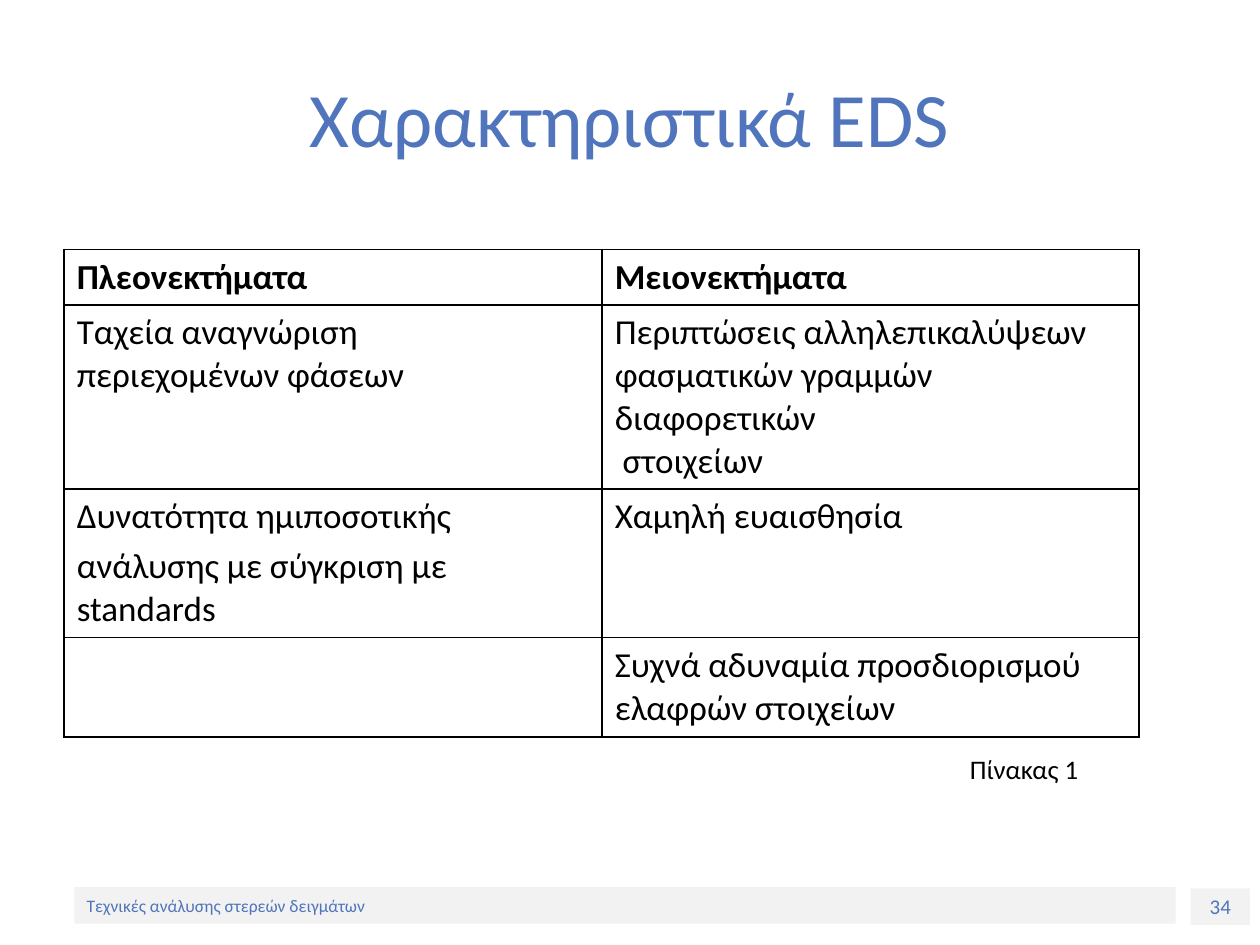
from lxml import etree
from pptx import Presentation
from pptx.dml.color import RGBColor
from pptx.enum.shapes import MSO_SHAPE
from pptx.enum.text import MSO_ANCHOR, PP_ALIGN
from pptx.oxml import parse_xml
from pptx.util import Inches, Pt

NS = "http://schemas.openxmlformats.org/drawingml/2006/main"
COLORS = {"accent": "5075BC", "text": "000000", "band": "F2F2F2"}
FONT = "Calibri"

# text, box (left, top, width, height), format
TEXTS = [
    ("34", (9.45, 7.05, 0.47, 0.29),
     dict(size=12, color="accent", align=PP_ALIGN.CENTER, band=True)),
    ("Τεχνικές ανάλυσης στερεών δειγμάτων", (0.59, 7.04, 8.74, 0.29),
     dict(size=10, color="accent", band=True)),
    ("Χαρακτηριστικά EDS", (0.5, 0.3, 9, 1.25),
     dict(size=44, color="accent", align=PP_ALIGN.CENTER)),
    ("Πίνακας 1", (7.6, 5.95, 1.5, 0.31), dict(size=15.3, color="text")),
]

TABLE_LEFT, TABLE_TOP = 0.51, 1.98
COL_WIDTHS = [4.27, 4.26]
# row height, then the paragraphs of each cell
ROWS = [
    (0.44, ["Πλεονεκτήματα"], ["Μειονεκτήματα"]),
    (1.46, ["Ταχεία αναγνώριση", "περιεχομένων φάσεων"],
     ["Περιπτώσεις αλληλεπικαλύψεων", "φασματικών γραμμών διαφορετικών",
      " στοιχείων"]),
    (1.18, ["Δυνατότητα ημιποσοτικής", "ανάλυσης με σύγκριση με standards"],
     ["Χαμηλή ευαισθησία"]),
    (0.79, [], ["Συχνά αδυναμία προσδιορισμού", "ελαφρών στοιχείων"]),
]
SPACED_ROW = 2


def rgb(name):
    return RGBColor.from_string(COLORS[name])


def write(p, text, size, color, bold=False):
    r = p.add_run()
    r.text = text
    for key, value in dict(name=FONT, size=Pt(size), bold=bold).items():
        setattr(r.font, key, value)
    r.font.color.rgb = rgb(color)


def add_text(slide, text, box, size, color, align=PP_ALIGN.LEFT, band=False):
    box = [Inches(v) for v in box]
    if band:
        sp = slide.shapes.add_shape(MSO_SHAPE.RECTANGLE, *box)
        sp.shadow.inherit = False
        sp.fill.solid()
        sp.fill.fore_color.rgb = rgb("band")
        sp.line.fill.background()
    else:
        sp = slide.shapes.add_textbox(*box)
    tf = sp.text_frame
    tf.word_wrap = True
    tf.vertical_anchor = MSO_ANCHOR.MIDDLE
    tf.paragraphs[0].alignment = align
    write(tf.paragraphs[0], text, size, color)


def frame_cell(cell):
    """Give the cell thin lines on all sides and no fill."""
    tc_pr = cell._tc.get_or_add_tcPr()
    for side in "LRTB":
        tc_pr.append(parse_xml(
            f'<a:ln{side} xmlns:a="{NS}" w="{Pt(1)}"><a:solidFill>'
            f'<a:srgbClr val="{COLORS["text"]}"/></a:solidFill></a:ln{side}>'))
    cell.fill.background()


def add_comparison(slide):
    heights = [row[0] for row in ROWS]
    table = slide.shapes.add_table(
        len(ROWS), len(COL_WIDTHS), Inches(TABLE_LEFT), Inches(TABLE_TOP),
        Inches(sum(COL_WIDTHS)), Inches(sum(heights))).table
    table.first_row = table.horz_banding = False
    for column, width in zip(table.columns, COL_WIDTHS):
        column.width = Inches(width)
    for i, (height, *cells) in enumerate(ROWS):
        table.rows[i].height = Inches(height)
        for j, lines in enumerate(cells):
            cell = table.cell(i, j)
            frame_cell(cell)
            tf = cell.text_frame
            for n, line in enumerate(lines):
                p = tf.add_paragraph() if n else tf.paragraphs[0]
                if n and i == SPACED_ROW:
                    p.space_before = Pt(4)
                write(p, line, 20, "text", bold=i == 0)


prs = Presentation()
prs.slide_width, prs.slide_height = Inches(10), Inches(7.5)
s = prs.slides.add_slide(prs.slide_layouts[6])
for text, box, style in TEXTS:
    add_text(s, text, box, **style)
add_comparison(s)
prs.save("out.pptx")
